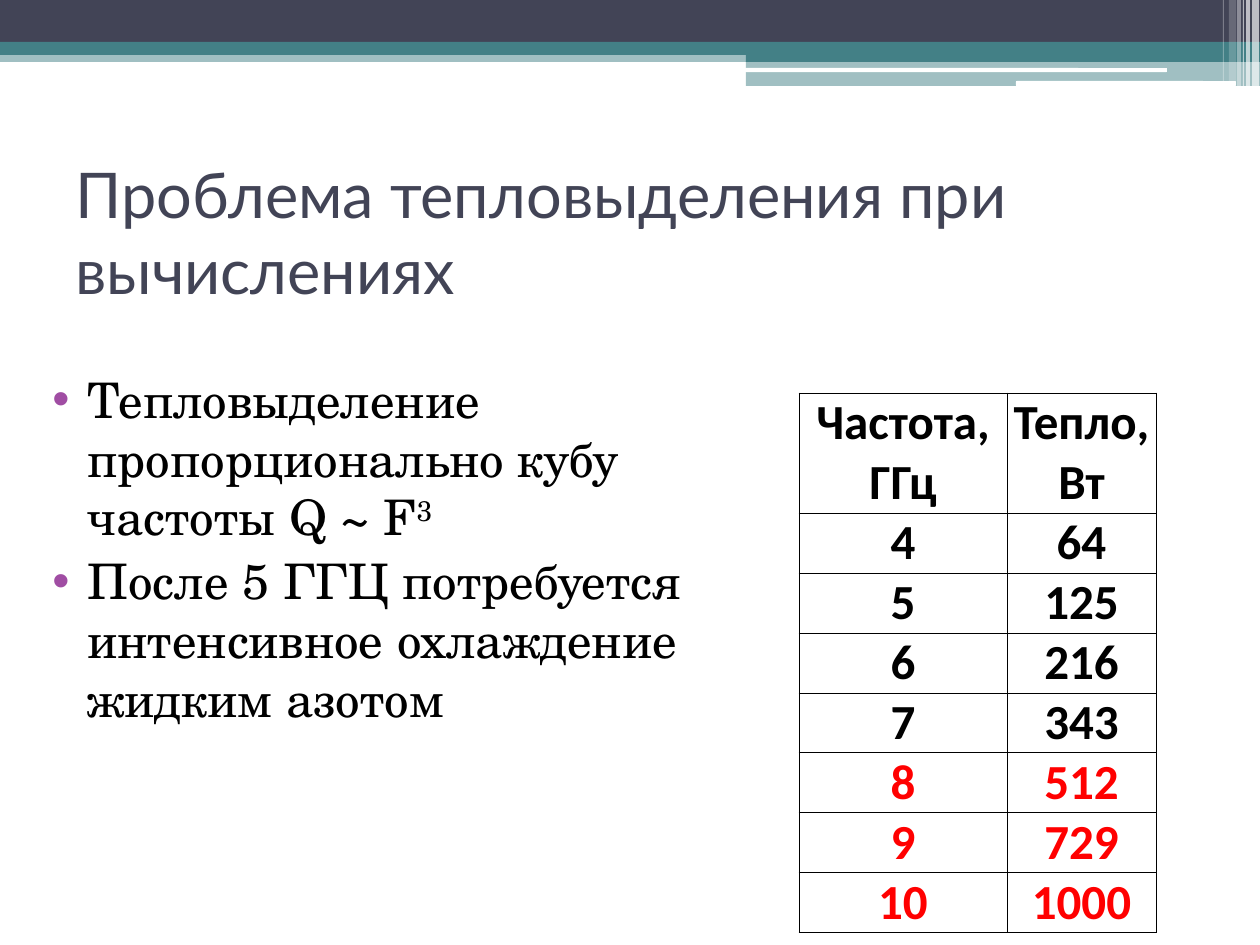
from lxml.etree import SubElement as Sub
from pptx import Presentation
from pptx.dml.color import RGBColor
from pptx.enum.shapes import MSO_SHAPE as Kind
from pptx.enum.text import MSO_ANCHOR as Anchor, PP_ALIGN as Align
from pptx.oxml.ns import qn
from pptx.util import Emu, Pt

NAVY = RGBColor(0x42, 0x44, 0x56)
TEAL = RGBColor(0x43, 0x80, 0x86)
WHITE = RGBColor(0xFF, 0xFF, 0xFF)
BLACK = RGBColor(0, 0, 0)
RED = RGBColor(0xFF, 0, 0)
PLUM = RGBColor(0xA0, 0x4D, 0xA3)


def px(n):
    return Emu(round(n * 914400 / 126))


def put(obj, **vals):
    for key, val in vals.items():
        setattr(obj, key, val)


class Deck:
    head = dict(name="Lato", size=Pt(36))
    body = dict(name="TeX Gyre Schola", size=Pt(28))
    cell = dict(name="Calibri", size=Pt(28), bold=True)

    def __init__(self, wide, high):
        self.prs = Presentation()
        put(self.prs, slide_width=px(wide), slide_height=px(high))
        self.slide = self.prs.slides.add_slide(self.prs.slide_layouts[6])

    def bar(self, x, y, w, h, color, alpha=100, kind=Kind.RECTANGLE):
        shape = self.slide.shapes.add_shape(kind, *map(px, (x, y, w, h)))
        shape.shadow.inherit = False
        shape.line.fill.background()
        shape.fill.solid()
        shape.fill.fore_color.rgb = color
        if alpha < 100:
            tint = shape.fill._xPr.find(".//" + qn("a:srgbClr"))
            Sub(tint, qn("a:alpha"), val=str(alpha * 1000))

    def run(self, para, text, style, color):
        run = para.add_run()
        run.text = text
        put(run.font, **style)
        run.font.color.rgb = color
        return run

    def box(self, x, y, w, h, anchor=Anchor.TOP):
        frame = self.slide.shapes.add_textbox(*map(px, (x, y, w, h))).text_frame
        put(frame, word_wrap=True, vertical_anchor=anchor)
        return frame

    def title(self, text, *area):
        frame = self.box(*area, Anchor.MIDDLE)
        self.run(frame.paragraphs[0], text, self.head, NAVY)

    def bullets(self, items, *area):
        frame = self.box(*area)
        for i, (text, power) in enumerate(items):
            para = frame.add_paragraph() if i else frame.paragraphs[0]
            para.space_before = Pt(3)
            props = para._p.get_or_add_pPr()
            props.set("marL", str(px(50)))
            props.set("indent", str(px(-35)))
            tint = Sub(props, qn("a:buClr"))
            Sub(tint, qn("a:srgbClr"), val=str(PLUM))
            Sub(props, qn("a:buFont"), typeface="Arial")
            Sub(props, qn("a:buChar"), char="•")
            self.run(para, text, self.body, BLACK)
            if power:
                run = self.run(para, power, self.body, BLACK)
                run.font._element.set("baseline", "30000")

    def border(self, cell):
        props = cell._tc.get_or_add_tcPr()
        for i, side in enumerate(("lnL", "lnR", "lnT", "lnB")):
            line = props.makeelement(qn("a:" + side), {"w": str(Pt(0.5))})
            fill = Sub(line, qn("a:solidFill"))
            Sub(fill, qn("a:srgbClr"), val=str(BLACK))
            props.insert(i, line)

    def table(self, rows, x, y, cols, highs, hot):
        area = map(px, (x, y, sum(cols), sum(highs)))
        table = self.slide.shapes.add_table(len(rows), len(cols), *area).table
        put(table, first_row=False, horz_banding=False)
        for col, wide in zip(table.columns, cols):
            col.width = px(wide)
        for r, row in enumerate(rows):
            table.rows[r].height = px(highs[r])
            for c, text in enumerate(row):
                cell = table.cell(r, c)
                put(cell, margin_left=0, margin_right=0, margin_top=0,
                    margin_bottom=0, vertical_anchor=Anchor.BOTTOM)
                cell.fill.background()
                self.border(cell)
                para = cell.text_frame.paragraphs[0]
                para.alignment = Align.CENTER
                self.run(para, text, self.cell, RED if r >= hot else BLACK)


deck = Deck(1260, 945)

# Header bands
deck.bar(0, 50, 1260, 12, TEAL, 50)
deck.bar(0, 0, 1260, 43, NAVY)
deck.bar(0, 42, 1260, 13, TEAL)
deck.bar(746, 49, 514, 13, TEAL)
deck.bar(746, 61, 514, 25, TEAL, 50)
for x, y, w, h in ((745, 68, 422, 4), (1016, 81, 220, 5)):
    deck.bar(x, y, w, h, WHITE, kind=Kind.ROUNDED_RECTANGLE)

# Pale stripes in the corner: left, width, height, opacity
for x, w, h, alpha in ((1252, 7, 86, 65), (1246, 4, 86, 65), (1243, 1, 86, 60),
                       (1237, 4, 86, 40), (1229, 7, 81, 20), (1223, 1, 81, 30)):
    deck.bar(x, 0, w, h, WHITE, alpha)

# Title and bullets
deck.title("Проблема тепловыделения при вычислениях", 63, 158, 1134, 147)
deck.bullets([
    ("Тепловыделение пропорционально кубу частоты Q ~ F", "3"),
    ("После 5 ГГЦ потребуется интенсивное охлаждение жидким азотом", ""),
], 25, 363, 725, 556)

# Heat grows as the cube of frequency
rows = [("Частота, ГГц", "Тепло, Вт")]
rows += [(str(f), str(f ** 3)) for f in range(4, 11)]
deck.table(rows, 799, 393, (208, 149), [120] + [60] * 7, hot=5)

deck.prs.save("out.pptx")
